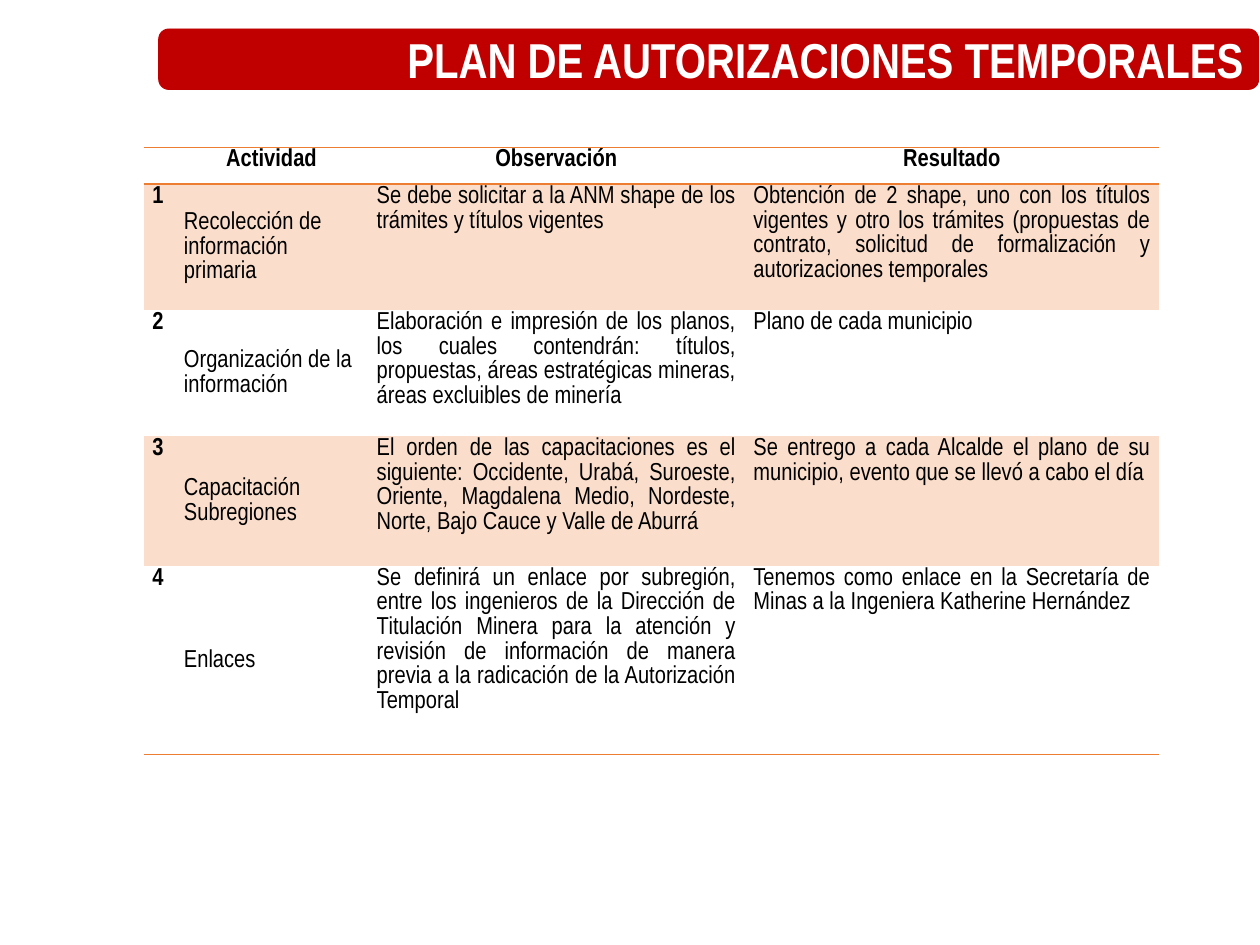
from lxml.etree import SubElement
from pptx import Presentation
from pptx.dml.color import RGBColor
from pptx.enum.shapes import MSO_SHAPE
from pptx.enum.text import MSO_ANCHOR, PP_ALIGN
from pptx.oxml.ns import qn
from pptx.util import Inches, Pt

RED, ORANGE, PEACH = "C00000", "ED7D31", "FADECB"
BLACK, WHITE = "000000", "FFFFFF"
COLS = [0.25, 1.53, 2.99, 3.29]
HIGH = [0.29, 1, 1, 1.03, 1.5]
ALIGN = [PP_ALIGN.LEFT, PP_ALIGN.LEFT, PP_ALIGN.JUSTIFY, PP_ALIGN.JUSTIFY]
ROWS = [
    ["", "Actividad", "Observación", "Resultado"],
    ["1", "Recolección de información primaria",
     "Se debe solicitar a la ANM shape de los trámites y títulos vigentes",
     "Obtención de 2 shape, uno con los títulos vigentes y otro los trámites "
     "(propuestas de contrato, solicitud de formalización y autorizaciones temporales"],
    ["2", "Organización de la información",
     "Elaboración e impresión de los planos, los cuales contendrán: títulos, "
     "propuestas, áreas estratégicas mineras, áreas excluibles de minería",
     "Plano de cada municipio"],
    ["3", "Capacitación Subregiones",
     "El orden de las capacitaciones es el siguiente: Occidente, Urabá, Suroeste, "
     "Oriente, Magdalena Medio, Nordeste, Norte, Bajo Cauce y Valle de Aburrá",
     "Se entrego a cada Alcalde el plano de su municipio, evento que se llevó a cabo el día"],
    ["4", "Enlaces",
     "Se definirá un enlace por subregión, entre los ingenieros de la Dirección de "
     "Titulación Minera para la atención y revisión de información de manera previa "
     "a la radicación de la Autorización Temporal",
     "Tenemos como enlace en la Secretaría de Minas a la Ingeniera Katherine Hernández"],
]


def color(code):
    return RGBColor.from_string(code)


def apply(item, form):
    for name, value in form.items():
        setattr(item, name, value)


class Deck:
    """Holds the text style and the current slide."""

    def __init__(self, slide, font):
        self.slide = slide
        self.font = font

    def label(self, frame, text, size, tint, bold, form):
        para = frame.paragraphs[0]
        para.text = text
        apply(para, form)
        apply(para.font, {"name": self.font, "size": Pt(size), "bold": bold})
        para.font.color.rgb = color(tint)

    def banner(self, text, box):
        bar = self.slide.shapes.add_shape(
            MSO_SHAPE.ROUNDED_RECTANGLE, *map(Inches, box))
        bar.shadow.inherit = False
        bar.fill.solid()
        bar.fill.fore_color.rgb = color(RED)
        bar.line.color.rgb = color(RED)
        bar.line.width = Pt(0.5)
        apply(bar.text_frame, {"word_wrap": True, "vertical_anchor": MSO_ANCHOR.MIDDLE})
        self.label(bar.text_frame, text, 28, WHITE, True, {"alignment": PP_ALIGN.RIGHT})

    def edges(self, cell, sides):
        props = cell._tc.get_or_add_tcPr()
        for side in "LRTB":
            line = SubElement(props, qn("a:ln" + side), w=str(Pt(1)))
            if side in sides:
                fill = SubElement(line, qn("a:solidFill"))
                SubElement(fill, qn("a:srgbClr"), val=ORANGE)
            else:
                SubElement(line, qn("a:noFill"))

    def table(self, rows, left, top):
        size = Inches(sum(COLS)), Inches(sum(HIGH))
        grid = self.slide.shapes.add_table(
            len(rows), len(COLS), Inches(left), Inches(top), *size).table
        apply(grid, {"first_row": False, "horz_banding": False})
        for col, width in zip(grid.columns, COLS):
            col.width = Inches(width)
        for row, tall in zip(grid.rows, HIGH):
            row.height = Inches(tall)
        for r, row in enumerate(rows):
            sides = {0: "TB", 1: "T", len(rows) - 1: "B"}.get(r, "")
            for c, text in enumerate(row):
                self.cell(grid.cell(r, c), text, r, c, sides)

    def cell(self, cell, text, r, c, sides):
        middle = r > 0 and c == 1
        apply(cell, {
            "margin_left": Inches(0.07), "margin_right": Inches(0.07),
            "margin_top": 0, "margin_bottom": 0,
            "vertical_anchor": MSO_ANCHOR.MIDDLE if middle else MSO_ANCHOR.TOP})
        self.edges(cell, sides)
        if r % 2:
            cell.fill.solid()
            cell.fill.fore_color.rgb = color(PEACH)
        else:
            cell.fill.background()
        self.label(cell.text_frame, text, 14, BLACK, r == 0 or c == 0, {
            "alignment": ALIGN[c] if r else PP_ALIGN.CENTER, "line_spacing": 1.07})


def main():
    show = Presentation()
    apply(show, {"slide_width": Inches(10), "slide_height": Inches(7.5)})
    deck = Deck(show.slides.add_slide(show.slide_layouts[6]), "Arial Narrow")
    deck.banner("PLAN DE AUTORIZACIONES TEMPORALES", (1.26, 0.23, 8.73, 0.48))
    deck.table(ROWS, 1.14, 1.17)
    show.save("out.pptx")


if __name__ == "__main__":
    main()
